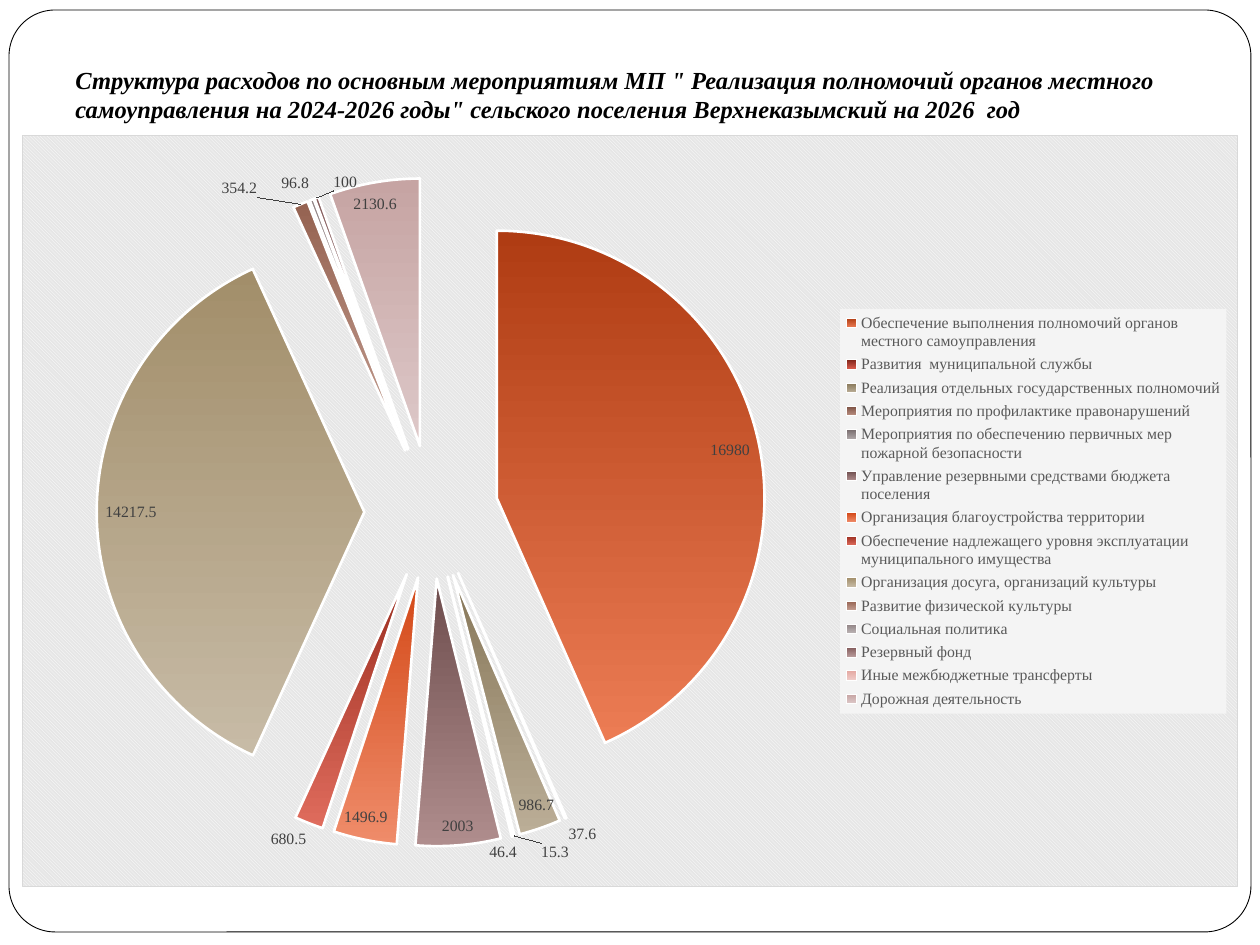
import dataclasses

import pptx
import pptx.chart.data
import pptx.dml.color
import pptx.enum.chart
import pptx.enum.shapes
import pptx.enum.text
import pptx.oxml
import pptx.oxml.ns
import pptx.util

SCALE = 914400 / 126
FONT = "Times New Roman"
COLOURS = {
    "paper": "FFFFFF",
    "ink": "000000",
    "label": "404040",
    "legend": "595959",
    "legend_fill": "F4F4F4",
    "pattern": "E6E6E6",
    "border": "D9D9D9",
}


@dataclasses.dataclass(frozen=True)
class Area:
    left: int
    top: int
    width: int
    height: int


@dataclasses.dataclass(frozen=True)
class Expense:
    name: str
    amount: float
    start: str
    end: str


FRAME = Area(9, 10, 1242, 922)
TITLE = Area(63, 37, 1123, 99)
CHART = Area(22, 135, 1216, 752)
PIE = Area(74, 42, 670, 670)
LEGEND = Area(818, 174, 387, 405)

EXPENSES = [
    Expense("Обеспечение выполнения полномочий органов местного самоуправления", 16980, "AF3C13", "EC7C54"),
    Expense("Развития  муниципальной службы", 37.6, "81251A", "DB5D4D"),
    Expense("Реализация отдельных государственных полномочий", 986.7, "867658", "BBAE97"),
    Expense("Мероприятия по профилактике правонарушений", 15.3, "7C5143", "BC9183"),
    Expense("Мероприятия по обеспечению первичных мер пожарной безопасности", 46.4, "786D6E", "AFA7A8"),
    Expense("Управление резервными средствами бюджета поселения", 2003, "6E4D4D", "AF8D8D"),
    Expense("Организация благоустройства территории", 1496.9, "D34817", "EF8C6A"),
    Expense("Обеспечение надлежащего уровня эксплуатации муниципального имущества", 680.5, "9B2D1F", "DF6C5D"),
    Expense("Организация досуга, организаций культуры", 14217.5, "A28E6A", "C7BBA6"),
    Expense("Развитие физической культуры", 354.2, "956251", "C49F92"),
    Expense("Социальная политика", 96.8, "918485", "BDB5B6"),
    Expense("Резервный фонд", 100, "855D5D", "B99B9B"),
    Expense("Иные межбюджетные трансферты", 0, "E4A8A2", "EFCBC7"),
    Expense("Дорожная деятельность", 2130.6, "C6A4A3", "DDC8C8"),
]


def px(length: int) -> int:
    return round(length * SCALE)


def place(area: Area) -> tuple[int, ...]:
    return tuple(px(length) for length in dataclasses.astuple(area))


def colour(value: str) -> pptx.dml.color.RGBColor:
    return pptx.dml.color.RGBColor.from_string(value)


def apply(target, values: dict) -> None:
    for name, value in values.items():
        setattr(target, name, value)


def style_font(font, size: float, ink: str, **extra) -> None:
    apply(font, {"name": FONT, "size": pptx.util.Pt(size), **extra})
    font.color.rgb = colour(COLOURS[ink])


def style_line(line, value: str, width: float) -> None:
    line.color.rgb = colour(value)
    line.width = pptx.util.Pt(width)


def chart_xml(body: str):
    return pptx.oxml.parse_xml(body.replace(" NS", " " + pptx.oxml.ns.nsdecls("c", "a"), 1))


def layout(area: Area, target: str):
    fractions = {
        "x": area.left / CHART.width,
        "y": area.top / CHART.height,
        "w": area.width / CHART.width,
        "h": area.height / CHART.height,
    }
    inner = '<c:layoutTarget val="inner"/>' if target == "inner" else ""
    modes = '<c:xMode val="edge"/><c:yMode val="edge"/>'
    sizes = "".join(f'<c:{name} val="{value:.3f}"/>' for name, value in fractions.items())
    return chart_xml(f"<c:layout NS><c:manualLayout>{inner}{modes}{sizes}</c:manualLayout></c:layout>")


def draw_frame(page) -> None:
    frame = page.shapes.add_shape(pptx.enum.shapes.MSO_SHAPE.ROUNDED_RECTANGLE, *place(FRAME))
    frame.adjustments[0] = 0.05
    frame.shadow.inherit = False
    frame.fill.solid()
    frame.fill.fore_color.rgb = colour(COLOURS["paper"])
    style_line(frame.line, COLOURS["ink"], 0.5)


def draw_title(page, text: str) -> None:
    box = page.shapes.add_textbox(*place(TITLE))
    apply(box.text_frame, {
        "word_wrap": True,
        "vertical_anchor": pptx.enum.text.MSO_ANCHOR.BOTTOM,
        "margin_left": pptx.util.Inches(0.1),
        "margin_right": pptx.util.Inches(0.1),
        "margin_top": pptx.util.Inches(0.05),
        "margin_bottom": pptx.util.Inches(0.1),
    })
    span = box.text_frame.paragraphs[0].add_run()
    span.text = text
    style_font(span.font, 14, "ink", bold=True, italic=True)


def style_background(chart) -> None:
    space = chart.element.xpath("c:chart")[0]
    space.addprevious(chart_xml('<c:roundedCorners NS val="0"/>'))
    space.addnext(chart_xml(
        '<c:spPr NS><a:pattFill prst="dkDnDiag">'
        f'<a:fgClr><a:srgbClr val="{COLOURS["paper"]}"/></a:fgClr>'
        f'<a:bgClr><a:srgbClr val="{COLOURS["pattern"]}"/></a:bgClr></a:pattFill>'
        f'<a:ln w="9525"><a:solidFill><a:srgbClr val="{COLOURS["border"]}"/></a:solidFill></a:ln></c:spPr>'
    ))


def style_legend(chart) -> None:
    chart.has_legend = True
    apply(chart.legend, {
        "position": pptx.enum.chart.XL_LEGEND_POSITION.RIGHT,
        "include_in_layout": False,
    })
    style_font(chart.legend.font, 9, "legend")
    for old in chart.element.xpath("c:chart/c:legend/c:layout"):
        old.getparent().remove(old)
    chart.element.xpath("c:chart/c:legend/c:legendPos")[0].addnext(layout(LEGEND, "outer"))
    chart.element.xpath("c:chart/c:legend/c:overlay")[0].addnext(chart_xml(
        f'<c:spPr NS><a:solidFill><a:srgbClr val="{COLOURS["legend_fill"]}"/></a:solidFill></c:spPr>'
    ))


def style_slices(chart) -> None:
    for old in chart.element.xpath("c:chart/c:plotArea/c:layout"):
        old.getparent().remove(old)
    chart.element.xpath("c:chart/c:plotArea")[0].insert(0, layout(PIE, "inner"))
    chart.element.xpath(".//c:ser/c:tx")[0].addnext(chart_xml('<c:explosion NS val="25"/>'))
    plot = chart.plots[0]
    plot.vary_by_categories = True
    series = plot.series[0]
    for index, expense in enumerate(EXPENSES):
        shape = series.points[index].format
        shape.fill.gradient()
        shape.fill.gradient_angle = 270
        for stop, value in zip(shape.fill.gradient_stops, (expense.start, expense.end)):
            stop.color.rgb = colour(value)
        style_line(shape.line, COLOURS["paper"], 1.5)
    labels = series.data_labels
    apply(labels, {
        "show_value": True,
        "number_format": "General;;",
        "number_format_is_linked": False,
        "position": pptx.enum.chart.XL_LABEL_POSITION.BEST_FIT,
    })
    style_font(labels.font, 9, "label")


def draw_chart(page) -> None:
    data = pptx.chart.data.CategoryChartData()
    data.categories = [expense.name for expense in EXPENSES]
    data.add_series("Series 1", [expense.amount for expense in EXPENSES])
    chart = page.shapes.add_chart(pptx.enum.chart.XL_CHART_TYPE.PIE, *place(CHART), data).chart
    chart.has_title = False
    style_font(chart.font, 10, "ink")
    style_background(chart)
    style_legend(chart)
    style_slices(chart)


def main() -> None:
    deck = pptx.Presentation()
    apply(deck, {"slide_width": px(1260), "slide_height": px(945)})
    page = deck.slides.add_slide(deck.slide_layouts[6])
    draw_frame(page)
    draw_title(page, 'Структура расходов по основным мероприятиям МП " Реализация полномочий органов местного '
                     'самоуправления на 2024-2026 годы" сельского поселения Верхнеказымский на 2026  год')
    draw_chart(page)
    deck.save("out.pptx")


if __name__ == "__main__":
    main()
